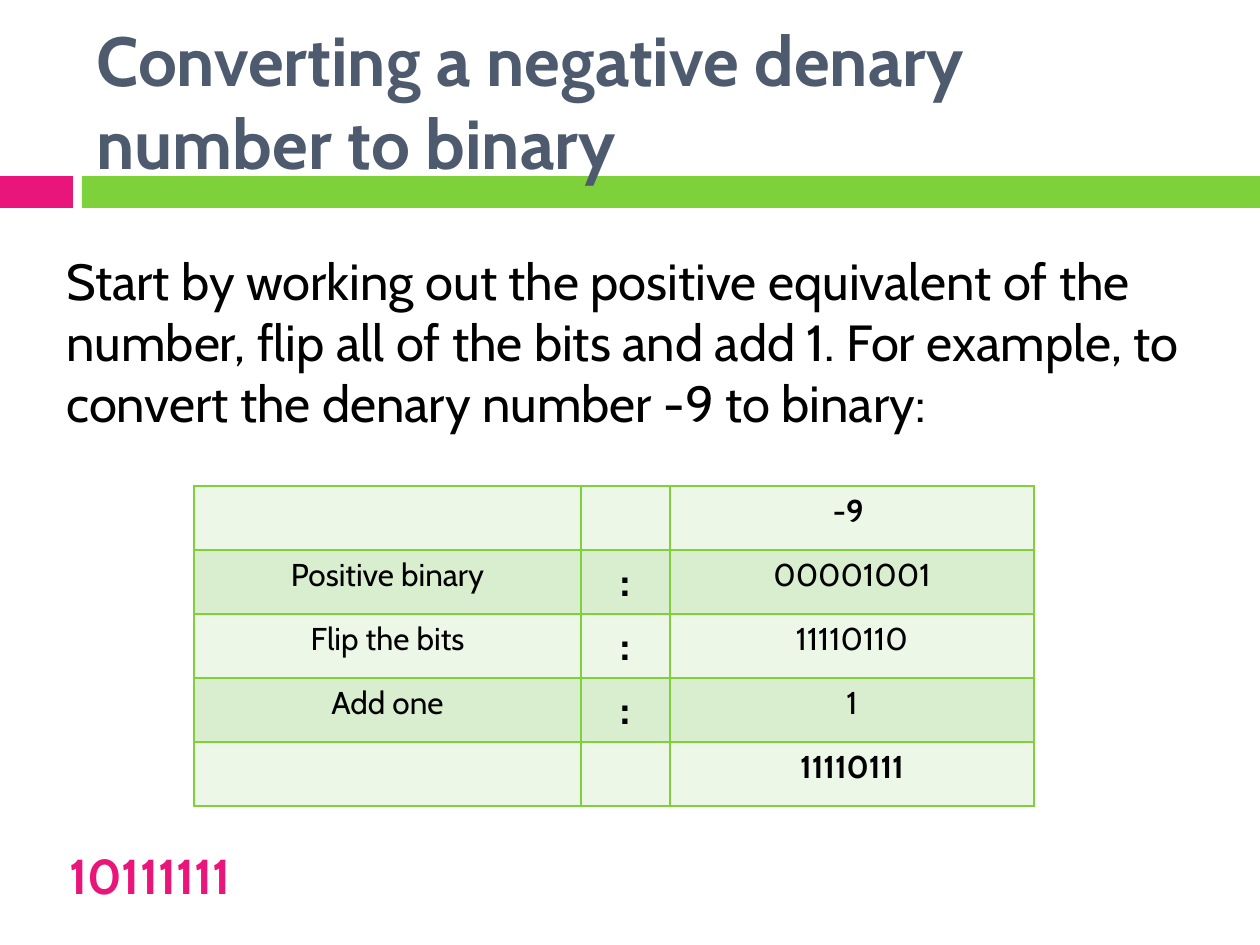
import dataclasses

import pptx
import pptx.dml.color
import pptx.enum.shapes
import pptx.enum.text
import pptx.oxml
import pptx.oxml.ns
import pptx.util

PX = 914400 / 126
FONT = "Cabin"
COLORS = {
    "pink": "EA157A",
    "green": "7FD13B",
    "slate": "4E5B6F",
    "black": "000000",
    "pale": "ECF7E8",
    "tint": "D8EECE",
}
COLUMNS = (387, 89, 364)
ROW_HEIGHT = 64
ROWS = (
    ("", "", "-9 "),
    ("Positive binary", ":", "00001001"),
    ("Flip the bits", ":", "11110110"),
    ("Add one", ":", "1"),
    ("", "", "11110111"),
)


@dataclasses.dataclass(frozen=True)
class Box:
    left: int
    top: int
    width: int
    height: int

    def emu(self) -> tuple[int, ...]:
        return tuple(px(v) for v in dataclasses.astuple(self))


@dataclasses.dataclass(frozen=True)
class Style:
    size: float
    color: str = "black"
    bold: bool = False


BARS = (
    (Box(0, 176, 73, 32), "pink"),
    (Box(82, 176, 1178, 32), "green"),
)


def px(value: int) -> int:
    return round(value * PX)


def rgb(name: str) -> pptx.dml.color.RGBColor:
    return pptx.dml.color.RGBColor.from_string(COLORS[name])


def set_text(tf, text: str, style: Style):
    tf.text = text
    tf.word_wrap = True
    p = tf.paragraphs[0]
    for r in p.runs:
        r.font.name = FONT
        r.font.size = pptx.util.Pt(style.size)
        r.font.bold = style.bold
        r.font.color.rgb = rgb(style.color)
    return p


def add_bar(s, box: Box, color: str) -> None:
    sp = s.shapes.add_shape(pptx.enum.shapes.MSO_SHAPE.RECTANGLE, *box.emu())
    sp.shadow.inherit = False
    sp.fill.solid()
    sp.fill.fore_color.rgb = rgb(color)
    sp.line.fill.background()


def add_text(s, box: Box, text: str, style: Style):
    sp = s.shapes.add_textbox(*box.emu())
    return set_text(sp.text_frame, text, style)


def place_title(s, box: Box, text: str, style: Style) -> None:
    sp = s.shapes.title
    sp.left, sp.top, sp.width, sp.height = box.emu()
    tf = sp.text_frame
    p = set_text(tf, text, style)
    p.alignment = pptx.enum.text.PP_ALIGN.LEFT
    tf.vertical_anchor = pptx.enum.text.MSO_ANCHOR.MIDDLE
    tf.auto_size = pptx.enum.text.MSO_AUTO_SIZE.NONE
    s.shapes._spTree.append(sp._element)


def add_borders(cell, color: str) -> None:
    tc_pr = cell._tc.get_or_add_tcPr()
    ns = pptx.oxml.ns.nsdecls("a")
    for i, side in enumerate(("lnL", "lnR", "lnT", "lnB")):
        ln = pptx.oxml.parse_xml(
            f'<a:{side} {ns} w="12700"><a:solidFill>'
            f'<a:srgbClr val="{COLORS[color]}"/></a:solidFill></a:{side}>'
        )
        tc_pr.insert(i, ln)


def add_steps_table(s, left: int, top: int) -> None:
    box = Box(left, top, sum(COLUMNS), ROW_HEIGHT * len(ROWS))
    table = s.shapes.add_table(len(ROWS), len(COLUMNS), *box.emu()).table
    for column, width in zip(table.columns, COLUMNS):
        column.width = px(width)
    for i, row in enumerate(ROWS):
        for j, text in enumerate(row):
            cell = table.cell(i, j)
            colon = text == ":"
            bold = colon or i in (0, len(ROWS) - 1)
            style = Style(24 if colon else 18, bold=bold)
            p = set_text(cell.text_frame, text, style)
            p.alignment = pptx.enum.text.PP_ALIGN.CENTER
            cell.fill.solid()
            cell.fill.fore_color.rgb = rgb("tint" if i % 2 else "pale")
            add_borders(cell, "green")


def main() -> None:
    prs = pptx.Presentation()
    prs.slide_width, prs.slide_height = px(1260), px(945)
    s = prs.slides.add_slide(prs.slide_layouts[5])
    for box, color in BARS:
        add_bar(s, box, color)
    place_title(
        s,
        Box(84, 32, 1092, 136),
        "Converting a negative denary number to binary",
        Style(39.6, "slate", True),
    )
    p = add_text(
        s,
        Box(54, 244, 1173, 242),
        "Start by working out the positive equivalent of the number, flip all of "
        "the bits and add 1. For example, to convert the denary number -9 to binary:",
        Style(29),
    )
    p.space_before = pptx.util.Pt(7)
    add_steps_table(s, 194, 486)
    add_text(s, Box(57, 839, 720, 72), "10111111", Style(28, "pink", True))
    prs.save("out.pptx")


if __name__ == "__main__":
    main()
